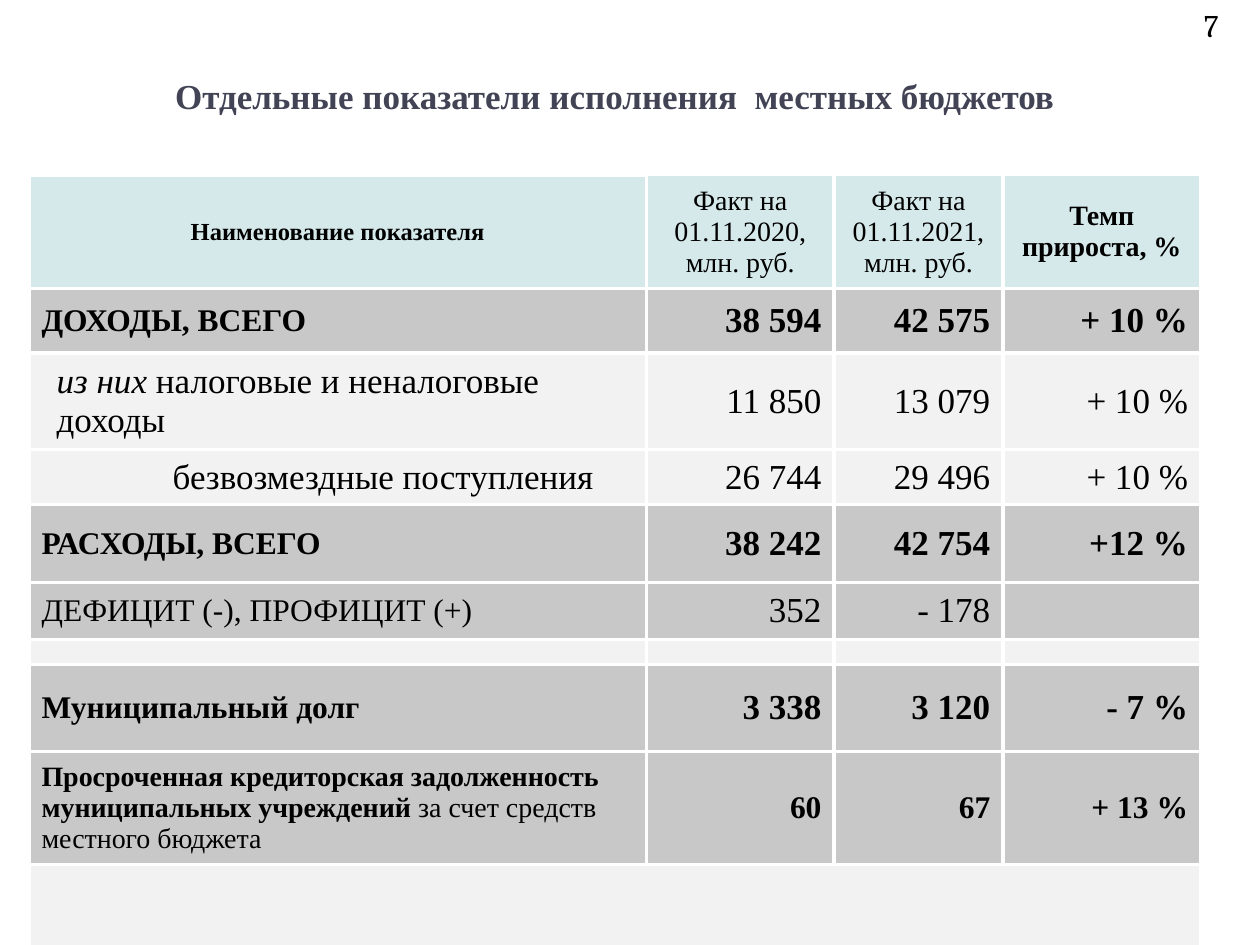
from lxml import etree
from pptx import Presentation
from pptx import util as u
from pptx.dml.color import RGBColor
from pptx.enum import text
from pptx.oxml.ns import qn

SERIF = "Times New Roman"
BLACK, WHITE, SLATE = "000000", "FFFFFF", "424456"
TEAL, GREY, PALE = "D6E9EA", "C8C8C8", "F2F2F2"
LEFT, CENTER, RIGHT = (text.PP_ALIGN.LEFT, text.PP_ALIGN.CENTER,
                       text.PP_ALIGN.RIGHT)
MIDDLE = text.MSO_ANCHOR.MIDDLE

TITLE = "Отдельные показатели исполнения  местных бюджетов"
COLS = [4.9, 1.49, 1.34, 1.57]

# Header cells: text, size, bold
HEAD = [
    ("Наименование показателя", 14, True),
    ("Факт на 01.11.2020, млн. руб.", 16, False),
    ("Факт на 01.11.2021, млн. руб.", 16, False),
    ("Темп прироста, %", 16, True),
]
# Body rows: height, fill, label size, label indent,
# label runs (text, style), values, value size, value bold
BODY = [
    (0.51, GREY, 18, 0, [("ДОХОДЫ, ВСЕГО", "b")],
     ["38 594", "42 575", "+ 10 %"], 20, True),
    (0.77, PALE, 20, 0.12,
     [("из них ", "i"), ("налоговые и неналоговые доходы", "")],
     ["11 850", "13 079", "+ 10 %"], 20, False),
    (0.43, PALE, 20, 1.04, [("безвозмездные поступления", "")],
     ["26 744", "29 496", "+ 10 %"], 20, False),
    (0.62, GREY, 18, 0, [("РАСХОДЫ, ВСЕГО", "b")],
     ["38 242", "42 754", "+12 %"], 20, True),
    (0.45, GREY, 18, 0, [("ДЕФИЦИТ (-), ПРОФИЦИТ (+)", "")],
     ["352", "- 178", ""], 20, False),
    (0.2, PALE, 6, 0, [], ["", "", ""], 6, False),
    (0.69, GREY, 18, 0, [("Муниципальный долг", "b")],
     ["3 338", "3 120", "- 7 %"], 20, True),
    (0.84, GREY, 16, 0,
     [("Просроченная кредиторская задолженность "
       "муниципальных учреждений ", "b"),
      ("за счет средств местного бюджета", "")],
     ["60", "67", "+ 13 %"], 18, True),
    (1.26, PALE, 18, 0, [], ["", "", ""], 18, False),
]
HEAD_H = 0.9


def color(code):
    return RGBColor.from_string(code)


def write(frame, runs, size, align, hue=BLACK, face=SERIF):
    """Fill the first paragraph with (text, style) runs; style holds b, i."""
    para = frame.paragraphs[0]
    para.alignment = align
    for words, style in runs:
        run = para.add_run()
        run.text = words
        font = run.font
        font.size, font.name = u.Pt(size), face
        font.bold, font.italic = "b" in style, "i" in style
        font.color.rgb = color(hue)
    if not runs:
        end = etree.SubElement(para._p, qn("a:endParaRPr"))
        end.set("sz", str(size * 100))
    return para


def edge(cell, top):
    """Draw white cell borders, the top one with its own width."""
    props = cell._tc.get_or_add_tcPr()
    for side, width in zip("LRTB", (2.25, 2.25, top, 2.25)):
        line = etree.SubElement(props, qn("a:ln" + side), w=str(u.Pt(width)))
        fill = etree.SubElement(line, qn("a:solidFill"))
        etree.SubElement(fill, qn("a:srgbClr"), val=WHITE)


def dress(cell, fill, top=2.25):
    edge(cell, top)
    cell.fill.solid()
    cell.fill.fore_color.rgb = color(fill)
    cell.vertical_anchor = MIDDLE


def add_grid(slide):
    heights = [HEAD_H] + [row[0] for row in BODY]
    table = slide.shapes.add_table(
        len(heights), len(COLS), u.Inches(0.23), u.Inches(1.39),
        u.Inches(sum(COLS)), u.Inches(sum(heights))).table
    for col, width in zip(table.columns, COLS):
        col.width = u.Inches(width)
    for row, height in zip(table.rows, heights):
        row.height = u.Inches(height)

    for c, (words, size, bold) in enumerate(HEAD):
        cell = table.cell(0, c)
        dress(cell, TEAL, 1 if c else 2.25)
        if c:
            cell.margin_left = cell.margin_right = u.Inches(0.04)
        write(cell.text_frame, [(words, "b" if bold else "")], size, CENTER)

    for r, (_, fill, size, indent, label, vals, big, bold) in enumerate(BODY, 1):
        style = "b" if bold else ""
        cells = [(label, size, LEFT)]
        cells += [([(v, style)] if v else [], big, RIGHT) for v in vals]
        for c, (runs, points, align) in enumerate(cells):
            cell = table.cell(r, c)
            dress(cell, fill)
            para = write(cell.text_frame, runs, points, align)
            if c == 0 and indent:
                props = para._p.get_or_add_pPr()
                props.set("marL", str(u.Inches(indent)))
                props.set("indent", "0")

    last = len(heights) - 1
    table.cell(last, 0).merge(table.cell(last, len(COLS) - 1))


def main():
    deck = Presentation()
    deck.slide_width, deck.slide_height = u.Inches(10), u.Inches(7.5)
    slide = deck.slides.add_slide(deck.slide_layouts[5])

    title = slide.shapes.title
    title.left, title.top = u.Inches(0.23), u.Inches(0.52)
    title.width, title.height = u.Inches(9.3), u.Inches(0.47)
    title.text_frame.vertical_anchor = MIDDLE
    write(title.text_frame, [(TITLE, "b")], 20, CENTER, SLATE)

    page = slide.shapes.add_textbox(
        u.Inches(8.94), 0, u.Inches(0.83), u.Inches(0.4)).text_frame
    page.word_wrap = True
    page.vertical_anchor = text.MSO_ANCHOR.BOTTOM
    write(page, [("7", "")], 18, RIGHT, face="Cambria")

    add_grid(slide)
    deck.save("out.pptx")


if __name__ == "__main__":
    main()
